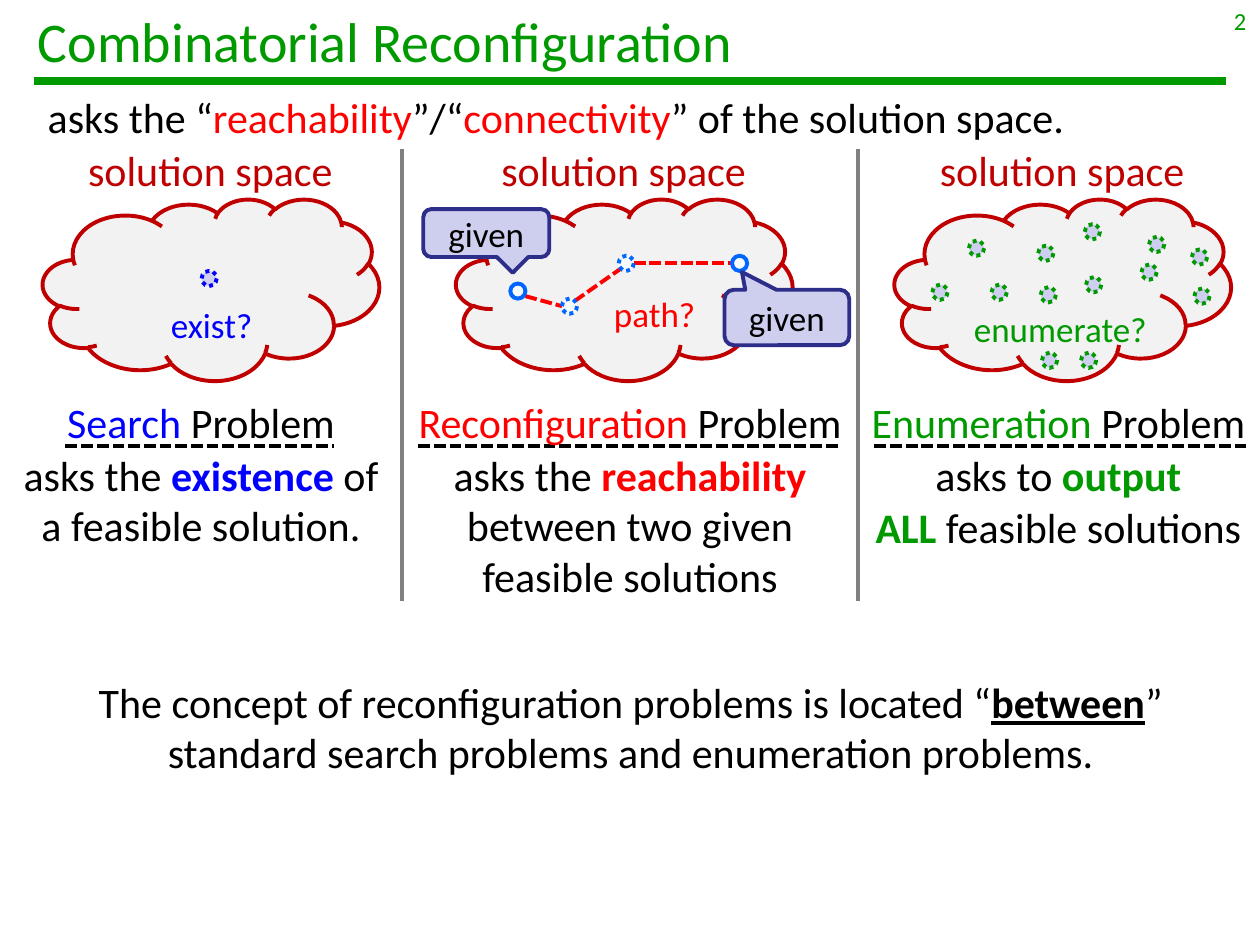
import lxml.etree
import pptx
import pptx.dml.color
import pptx.enum.dml
import pptx.enum.shapes
import pptx.enum.text
import pptx.oxml.ns
import pptx.util

Inches = pptx.util.Inches
Pt = pptx.util.Pt
RGB = pptx.dml.color.RGBColor.from_string
KIND = pptx.enum.shapes.MSO_SHAPE
DASH = pptx.enum.dml.MSO_LINE.SQUARE_DOT
DOT = pptx.enum.dml.MSO_LINE.ROUND_DOT
ALIGN = pptx.enum.text.PP_ALIGN
ANCHOR = pptx.enum.text.MSO_ANCHOR

HUE = {
    "black": "000000", "gray": "808080", "green": "009900", "red": "FF0000",
    "blue": "0000FF", "wine": "C00000", "cloud": "F2F2F2", "lilac": "CECEEF",
    "navy": "2D2D8A", "azure": "0066FF", "pale": "F8FBFC",
}

pres = pptx.Presentation()
pres.slide_width, pres.slide_height = Inches(10), Inches(7.5)
slide = pres.slides.add_slide(pres.slide_layouts[5])


def write(shape, lines, size, align=ALIGN.CENTER, gap=1.2):
    """Fill a shape with paragraphs, each a list of (text, hue, flags); flags: b bold, u underlined."""
    frame = shape.text_frame
    for i, runs in enumerate(lines):
        para = frame.paragraphs[0] if i == 0 else frame.add_paragraph()
        para.alignment = align
        para.space_before = Pt(gap)
        para.font.name, para.font.size = "Calibri", Pt(size)
        hues = {hue for _, hue, _ in runs}
        if len(hues) == 1:
            para.font.color.rgb = RGB(HUE[runs[0][1]])
        for text, hue, flags in runs:
            run = para.add_run()
            run.text = text
            if len(hues) > 1:
                run.font.color.rgb = RGB(HUE[hue])
            if "b" in flags:
                run.font.bold = True
            if "u" in flags:
                run.font.underline = True


def draw(kind, left, top, width, height, fill, edge, dash=None):
    shape = slide.shapes.add_shape(kind, Inches(left), Inches(top), Inches(width), Inches(height))
    shape.shadow.inherit = False
    shape.fill.solid()
    shape.fill.fore_color.rgb = RGB(HUE[fill])
    shape.line.color.rgb = RGB(HUE[edge])
    shape.line.width = Pt(2.25)
    if dash:
        shape.line.dash_style = dash
    return shape


# Title
title = slide.shapes.title
title.left, title.top = Inches(0.2), Inches(-0.03)
title.width, title.height = Inches(9.61), Inches(0.69)
title.text_frame.auto_size = pptx.enum.text.MSO_AUTO_SIZE.NONE
title.text_frame.vertical_anchor = ANCHOR.MIDDLE
write(title, [[("Combinatorial Reconfiguration", "green", "")]], 32, ALIGN.LEFT, 0)

# Clouds
clouds = [0.34, 3.62, 7.1]
for left in clouds:
    draw(KIND.CLOUD, left, 1.58, 2.67, 1.44, "cloud", "wine")

# Rules, path steps, column dividers and heading underlines
lines = [
    (0.27, 0.64, 9.73, 0.64, "green", 4.5, None),
    (4.17, 2.35, 4.46, 2.43, "red", 2.25, DASH),
    (4.56, 2.39, 4.93, 2.13, "red", 2.25, DASH),
    (5.03, 2.09, 5.8, 2.09, "red", 2.25, DASH),
]
lines += [(x, 1.18, x, 4.77, "gray", 2.25, None) for x in (3.19, 6.81)]
lines += [(x, 3.54, end, 3.54, "black", 2.25, DASH)
          for x, end in ((0.52, 2.65), (3.32, 6.67), (6.94, 9.89))]
for x1, y1, x2, y2, hue, width, dash in lines:
    line = slide.shapes.add_connector(
        pptx.enum.shapes.MSO_CONNECTOR.STRAIGHT, Inches(x1), Inches(y1), Inches(x2), Inches(y2))
    line.line.color.rgb = RGB(HUE[hue])
    line.line.width = Pt(width)
    if dash:
        line.line.dash_style = dash
    lxml.etree.SubElement(line._element.spPr, pptx.oxml.ns.qn("a:effectLst"))

# Solutions
dots = [
    (1.6, 2.15, "lilac", "blue", DOT),
    (4.05, 2.25, "pale", "azure", None),
    (4.46, 2.37, "pale", "azure", DOT),
    (4.91, 2.03, "pale", "azure", DOT),
    (5.81, 2.03, "pale", "azure", None),
]
found = [
    (7.69, 1.91), (7.87, 2.26), (8.24, 1.95), (9.06, 2.1), (9.12, 1.88), (8.62, 2.2), (7.4, 2.26),
    (8.26, 2.28), (8.61, 1.78), (9.48, 2.29), (9.46, 1.98), (8.27, 2.8), (8.58, 2.8),
]
dots += [(x, y, "lilac", "green", DOT) for x, y in found]
for x, y, fill, edge, dash in dots:
    draw(KIND.OVAL, x, y, 0.12, 0.12, fill, edge, dash)

# Callouts
for left, top, width, height, tip in [
    (3.36, 1.66, 1, 0.38, (0.21, 0.83)),
    (5.75, 2.3, 0.99, 0.44, (-0.36, -0.82)),
]:
    call = draw(KIND.ROUNDED_RECTANGULAR_CALLOUT, left, top, width, height, "lilac", "navy")
    call.adjustments[0], call.adjustments[1] = tip
    call.text_frame.vertical_anchor = ANCHOR.MIDDLE
    write(call, [[("given", "black", "")]], 20)

# Labels on one line: left, top, width, height, size, text, hue
labels = [(left + 0.25, 1.1, 2.16, 0.5, 24, "solution space", "wine") for left in clouds]
labels += [
    (1.25, 2.36, 0.86, 0.44, 20, "exist?", "blue"),
    (4.77, 2.27, 0.85, 0.44, 20, "path?", "red"),
    (7.62, 2.39, 1.59, 0.44, 20, "enumerate?", "green"),
]
for left, top, width, height, size, text, hue in labels:
    box = slide.shapes.add_textbox(Inches(left), Inches(top), Inches(width), Inches(height))
    box.text_frame.word_wrap = False
    write(box, [[(text, hue, "")]], size)

# Wrapped text: left, top, width, height, size, alignment, paragraphs
blocks = [
    (0.28, 0.68, 9.45, 0.5, 24, ALIGN.LEFT, [
        [("asks the “", "black", ""), ("reachability", "red", ""), ("”/“", "black", ""),
         ("connectivity", "red", ""), ("” of the solution space.", "black", "")]]),
    (0, 3.1, 3.19, 1.33, 24, ALIGN.CENTER, [
        [("Search ", "blue", ""), ("Problem", "black", "")],
        [("asks the ", "black", ""), ("existence", "blue", "b"),
         (" of a feasible solution.", "black", "")]]),
    (3.19, 3.1, 3.62, 1.74, 24, ALIGN.CENTER, [
        [("Reconfiguration ", "red", ""), ("Problem", "black", "")],
        [("asks the ", "black", ""), ("reachability", "red", "b"),
         (" between two given feasible solutions", "black", "")]]),
    (6.81, 3.1, 3.18, 1.35, 24, ALIGN.CENTER, [
        [("Enumeration ", "green", ""), ("Problem", "black", "")],
        [("asks to ", "black", ""), ("output", "green", "b")],
        [("ALL", "green", "b"), (" feasible solutions", "black", "")]]),
    (0.28, 5.32, 9.45, 0.91, 24, ALIGN.CENTER, [
        [("The concept of reconfiguration problems is located “", "black", ""),
         ("between", "black", "bu"),
         ("” standard search problems and enumeration problems.", "black", "")]]),
    (7.66, 0, 2.33, 0.52, 14, ALIGN.RIGHT, [[("2", "green", "")]]),
]
for left, top, width, height, size, align, paras in blocks:
    box = slide.shapes.add_textbox(Inches(left), Inches(top), Inches(width), Inches(height))
    box.text_frame.word_wrap = True
    write(box, paras, size, align)

pres.save("out.pptx")
